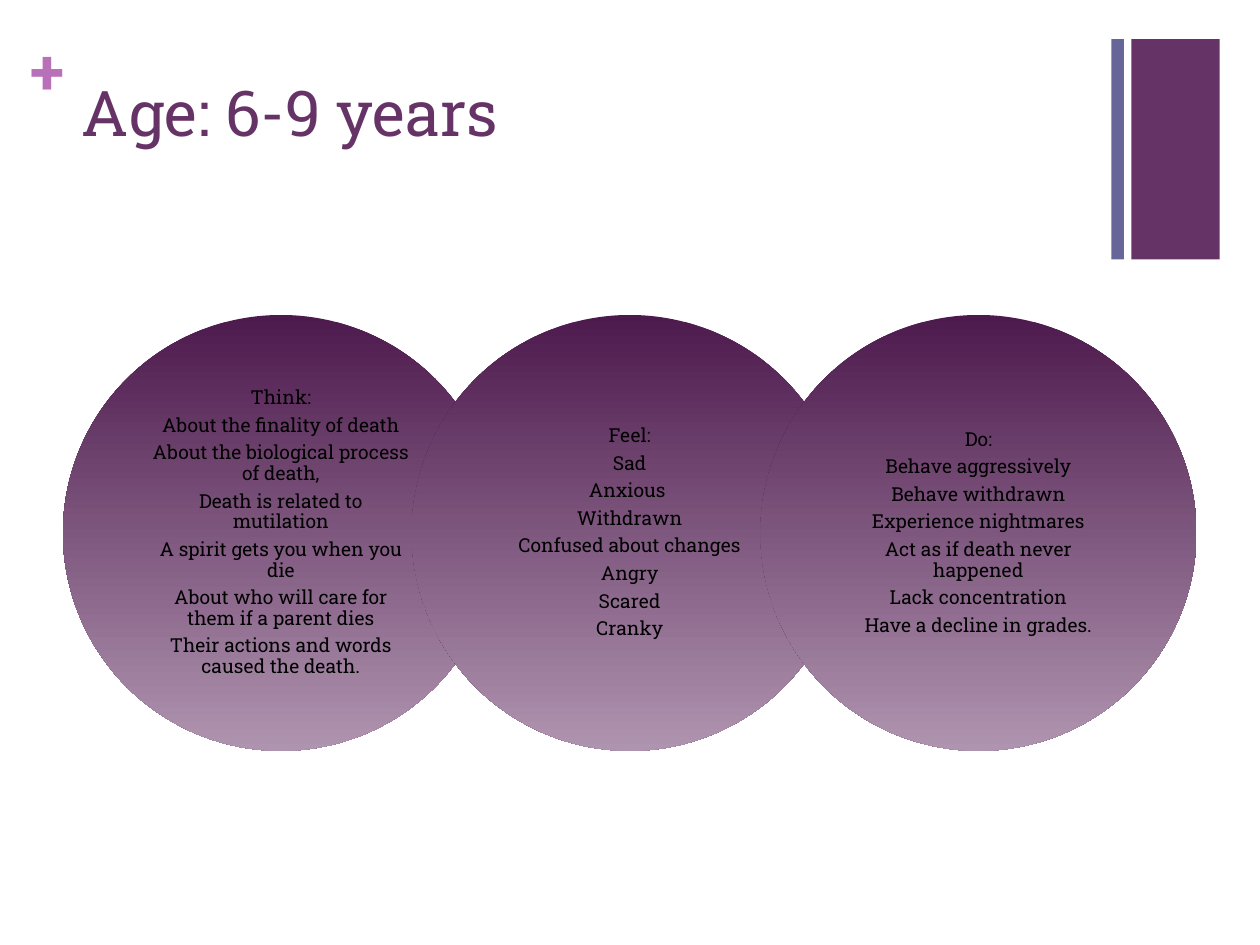
from pptx import Presentation
from pptx.dml.color import RGBColor
from pptx.enum.shapes import MSO_SHAPE
from pptx.enum.text import MSO_ANCHOR, MSO_AUTO_SIZE, PP_ALIGN
from pptx.util import Inches, Pt

RECT, OVAL = MSO_SHAPE.RECTANGLE, MSO_SHAPE.OVAL
TOP, MIDDLE = MSO_ANCHOR.TOP, MSO_ANCHOR.MIDDLE
LEFT, CENTER = PP_ALIGN.LEFT, PP_ALIGN.CENTER
FIXED = MSO_AUTO_SIZE.NONE

PLUM = RGBColor(0x66, 0x33, 0x66)
SLATE = RGBColor(0x66, 0x66, 0x99)
ORCHID = RGBColor(0xB8, 0x70, 0xB8)
DARK = RGBColor(0x4D, 0x1A, 0x4D)
PALE = RGBColor(0xAF, 0x94, 0xAF)
BLACK = RGBColor(0, 0, 0)
FONT = "Roboto Slab"

WIDTH, HEIGHT = 10, 7.5
EDGE = 0.5
DISC = 3.46
STEP = DISC * 0.8
ROW = HEIGHT / 3

GROUPS = [
    ["Think:", "About the finality of death",
     "About the biological process of death,",
     "Death is related to mutilation",
     "A spirit gets you when you die",
     "About who will care for them if a parent dies",
     "Their actions and words caused the death."],
    ["Feel:", "Sad", "Anxious ", "Withdrawn", "Confused about changes",
     "Angry", "Scared", "Cranky"],
    ["Do:", "Behave aggressively", "Behave withdrawn",
     "Experience nightmares", "Act as if death never happened",
     "Lack concentration", "Have a decline in grades."],
]


def write(frame, lines, size=36, color=PLUM, bold=False, align=LEFT,
          anchor=TOP, inset=(0.1, 0.05), wrap=True, leading=None, after=0):
    frame.auto_size = FIXED
    frame.word_wrap = wrap
    frame.vertical_anchor = anchor
    frame.margin_left = frame.margin_right = Inches(inset[0])
    frame.margin_top = frame.margin_bottom = Inches(inset[1])
    for i, line in enumerate(lines):
        para = frame.add_paragraph() if i else frame.paragraphs[0]
        para.alignment = align
        para.line_spacing = leading
        para.space_before = Pt(0)
        para.space_after = Pt(after)
        run = para.add_run()
        run.text = line
        font = run.font
        font.name, font.size, font.bold = FONT, Pt(size), bold
        font.color.rgb = color


def shape(shapes, kind, *box):
    item = shapes.add_shape(kind, *map(Inches, box))
    item.shadow.inherit = False
    item.line.fill.background()
    return item


def bar(slide, left, width, color):
    item = shape(slide.shapes, RECT, left, 0.31, width, 1.75)
    item.fill.solid()
    item.fill.fore_color.rgb = color


def plus(slide):
    box = slide.shapes.add_textbox(*map(Inches, (0.24, 0.25, 0.29, 0.61)))
    write(box.text_frame, ["+"], color=ORCHID, bold=True, inset=(0, 0),
          wrap=False)


def title(slide, text):
    item = slide.shapes.title
    item.left, item.top, item.width, item.height = map(
        Inches, (0.55, 0.53, 8.26, 1.22))
    write(item.text_frame, [text])


def disc(shapes, col, lines):
    item = shape(shapes, OVAL, EDGE + col * STEP, ROW, DISC, DISC)
    item.fill.gradient()
    item.fill.gradient_angle = 270
    for stop, color in zip(item.fill.gradient_stops, (DARK, PALE)):
        stop.color.rgb = color
    write(item.text_frame, lines, size=11, color=BLACK, align=CENTER,
          anchor=MIDDLE, inset=(0.19, 0.02), leading=0.9, after=3.85)


def main():
    deck = Presentation()
    deck.slide_width, deck.slide_height = Inches(WIDTH), Inches(HEIGHT)
    slide = deck.slides.add_slide(deck.slide_layouts[5])
    bar(slide, 8.98, 0.7, PLUM)
    plus(slide)
    bar(slide, 8.82, 0.1, SLATE)
    title(slide, "Age: 6-9 years")
    chain = slide.shapes.add_group_shape()
    for col, lines in enumerate(GROUPS):
        disc(chain.shapes, col, lines)
    deck.save("out.pptx")


if __name__ == "__main__":
    main()
